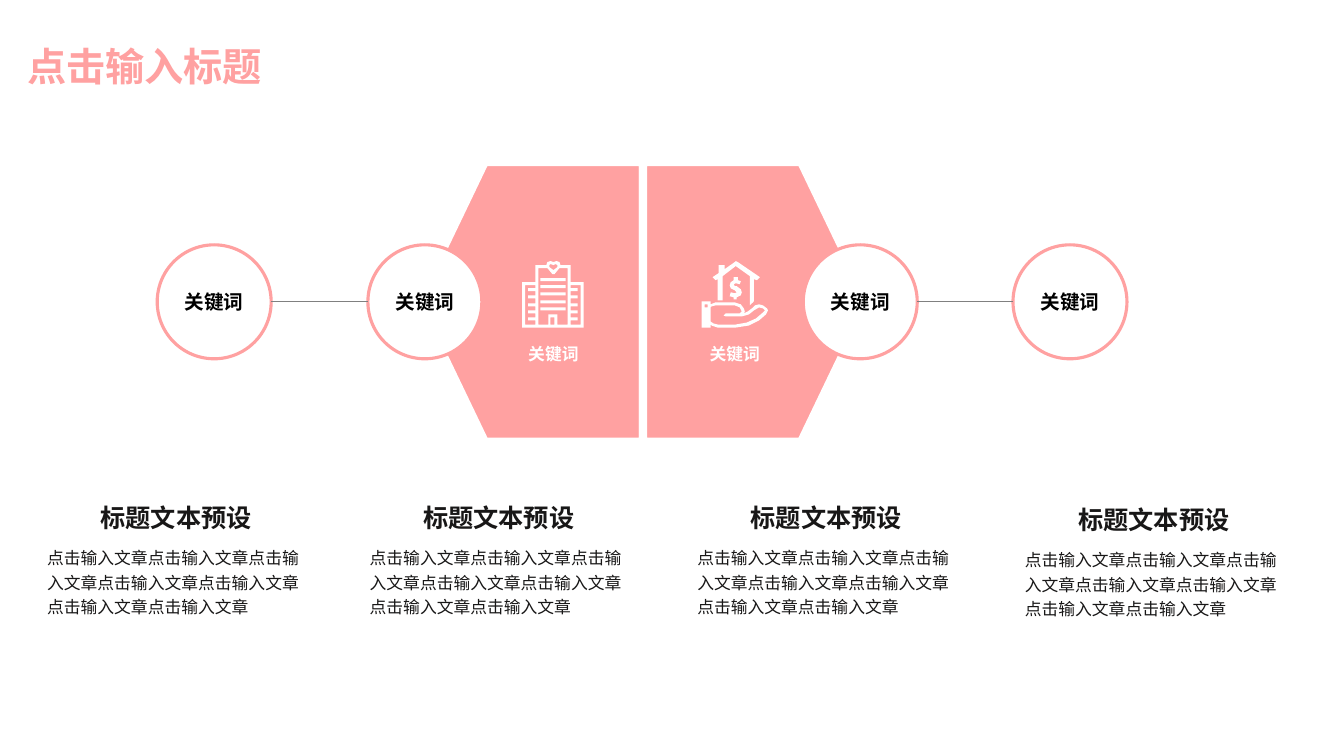
from lxml import etree
from pptx import Presentation
from pptx import util as u
from pptx.dml.color import RGBColor
from pptx.enum import shapes, text
from pptx.oxml.ns import qn

TITLE = "点击输入标题"
KEYWORD = "关键词"
HEADING = "标题文本预设"
BODY = "点击输入文章" * 7
COLUMNS = [(26.6, 355), (257, 355), (491, 355), (725, 356.4)]  # left, heading top


class Theme:
    font = "Calibri"
    pink, white, black = "FFA1A1", "FFFFFF", "000000"
    ink, gray = "181717", "808080"
    title, heading, circle, label, body = 28, 18, 14, 12, 12


AXIS, MIDDLE = 459.3, 215.6
HALF_W, HALF_H, FLAT_W = 161.2, 99.7, 112.8
CIRCLE = 81.4
ICON_TOP, ICON_UNIT = 186.5, 0.72


def rect(x, y, w, h):
    return [(x, y), (x + w, y), (x + w, y + h), (x, y + h)]


# Icon outlines: inner contours cut holes, contours inside holes are filled.
HOSPITAL = [
    [(0, 21), (13, 21), (13, 4), (24, 4), (25, 1), (28, 0), (31, 1), (34, 0),
     (37, 1), (38, 4), (48, 4), (48, 21), (61, 21), (61, 66), (0, 66)],
    [(16, 7), (25, 7), (30, 13), (32, 13), (37, 7), (45, 7), (45, 63),
     (35, 63), (35, 53), (26, 53), (26, 63), (16, 63)],
    [(31, 9), (27, 6), (27, 4), (28, 3), (31, 4), (33, 3), (35, 4), (35, 6)],
    rect(28.5, 56, 4, 7),
    *[rect(18, y, 25, 3) for y in (17, 24, 31, 39, 46)],
    *[rect(x, 24, 10, 39) for x in (3, 48)],
    *[rect(x, y, 7, 3) for x in (6, 48) for y in (27, 34, 42, 49, 56)],
]
HOUSE_IN_HAND = [
    [(34, 0), (36, 1), (58, 16), (55, 19), (52, 18), (52, 40), (51, 41),
     (48, 44), (48, 15), (34, 5), (21, 15), (21, 39), (16, 39), (16, 18),
     (14, 19), (11, 16), (17, 12), (17, 4), (23, 4), (23, 8), (33, 1)],
    [(0, 40), (9, 40), (9, 43), (14, 41), (33, 41), (39, 43), (42, 47),
     (43, 50), (42, 52), (46, 50), (50, 47), (53, 44), (57, 43), (61, 44),
     (65, 47), (66, 49), (64, 53), (57, 59), (47, 64), (34, 66), (16, 66),
     (10, 64), (9, 63), (9, 66), (0, 66)],
    rect(3, 43, 3, 3),
    [(14, 44), (10, 45), (9, 46), (9, 60), (12, 62), (16, 63), (34, 63),
     (45, 61), (54, 57), (61, 51), (63, 49), (61, 47), (57, 46), (52, 49),
     (47, 53), (40, 55), (24, 55), (22, 53.5), (24, 52), (38, 52), (40, 50),
     (38, 46), (33, 44)],
    [(32, 16), (36, 16), (36, 19), (39, 20), (38, 23), (34, 22), (32, 23),
     (33, 25), (35, 25), (39, 28), (40, 31), (39, 34), (35, 36), (35, 38),
     (32, 38), (32, 36), (28, 35), (29, 31), (33, 32), (35, 31), (33, 29),
     (29, 27), (28, 24), (29, 21), (32, 19)],
]
# direction, icon, icon left, label left, inner circle left, outer circle left
SIDES = [
    (-1, HOSPITAL, 373, 369.4, 262.8, 112.3),
    (1, HOUSE_IN_HAND, 501.1, 499, 573.8, 723.6),
]


def rgb(value):
    return RGBColor.from_string(value)


def paint(sp, fill, line=None, width=0):
    sp.shadow.inherit = False
    sp.fill.solid()
    sp.fill.fore_color.rgb = rgb(fill)
    if line:
        sp.line.color.rgb = rgb(line)
        sp.line.width = u.Pt(width)
    else:
        sp.line.fill.background()


def write(sp, content, size, color, bold=False, align=text.PP_ALIGN.LEFT,
          anchor=text.MSO_ANCHOR.TOP, wrap=True, spacing=None):
    tf = sp.text_frame
    tf.word_wrap = wrap
    tf.auto_size = text.MSO_AUTO_SIZE.NONE
    tf.vertical_anchor = anchor
    p = tf.paragraphs[0]
    p.alignment = align
    if spacing:
        p.line_spacing = spacing
    r = p.add_run()
    r.text = content
    r.font.name, r.font.size, r.font.bold = Theme.font, u.Pt(size), bold
    r.font.color.rgb = rgb(color)


def box(s, x, y, w, h, *args, **fmt):
    sp = s.shapes.add_textbox(u.Pt(x), u.Pt(y), u.Pt(w), u.Pt(h))
    write(sp, *args, **fmt)


def outline(s, contours, x, y, unit=1.0):
    """Draw closed contours as one freeform with its local origin at x, y."""
    first, *rest = contours
    fb = s.shapes.build_freeform(*first[0], scale=u.Pt(unit))
    fb.add_line_segments(first[1:], close=True)
    for points in rest:
        fb.move_to(*points[0])
        fb.add_line_segments(points[1:], close=True)
    return fb.convert_to_shape(u.Pt(x), u.Pt(y))


def circle(s, x):
    sp = s.shapes.add_shape(shapes.MSO_SHAPE.OVAL, u.Pt(x), u.Pt(MIDDLE - CIRCLE / 2),
                            u.Pt(CIRCLE), u.Pt(CIRCLE))
    paint(sp, Theme.white, Theme.pink, 2.25)
    write(sp, KEYWORD, Theme.circle, Theme.black, bold=True, wrap=False,
          align=text.PP_ALIGN.CENTER, anchor=text.MSO_ANCHOR.MIDDLE)


def link(s, x1, x2):
    cx = s.shapes.add_connector(shapes.MSO_CONNECTOR.STRAIGHT, u.Pt(x1), u.Pt(MIDDLE),
                                u.Pt(x2), u.Pt(MIDDLE))
    cx.line.color.rgb = rgb(Theme.gray)
    cx.line.width = u.Pt(0.5)
    etree.SubElement(cx._element.spPr, qn("a:effectLst"))


def side(s, direction, icon, icon_x, label_x, inner_x, outer_x):
    half_hexagon = [(0, -HALF_H), (direction * FLAT_W, -HALF_H), (direction * HALF_W, 0),
                    (direction * FLAT_W, HALF_H), (0, HALF_H)]
    paint(outline(s, [half_hexagon], AXIS, MIDDLE), Theme.pink, Theme.white, 6)
    paint(outline(s, icon, icon_x, ICON_TOP, ICON_UNIT), Theme.white)
    box(s, label_x, 242, 51.8, 21.6, KEYWORD, Theme.label, Theme.white, bold=True,
        align=text.PP_ALIGN.CENTER, wrap=False)
    circle(s, inner_x)
    circle(s, outer_x)
    left, right = sorted((inner_x, outer_x))
    link(s, left + CIRCLE, right)


def main():
    prs = Presentation()
    prs.slide_width, prs.slide_height = u.Pt(960), u.Pt(540)
    s = prs.slides.add_slide(prs.slide_layouts[5])
    title = s.shapes.title
    title.left, title.top, title.width, title.height = map(u.Pt, (12.2, 26.6, 190, 41))
    write(title, TITLE, Theme.title, Theme.pink, bold=True)
    for args in SIDES:
        side(s, *args)
    for x, y in COLUMNS:
        box(s, x, y + 30.2, 203.8, 44, BODY, Theme.body, Theme.ink, spacing=1.2)
        box(s, x + 38.2, y, 172.8, 27.4, HEADING, Theme.heading, Theme.ink, bold=True)
    prs.save("out.pptx")


if __name__ == "__main__":
    main()
